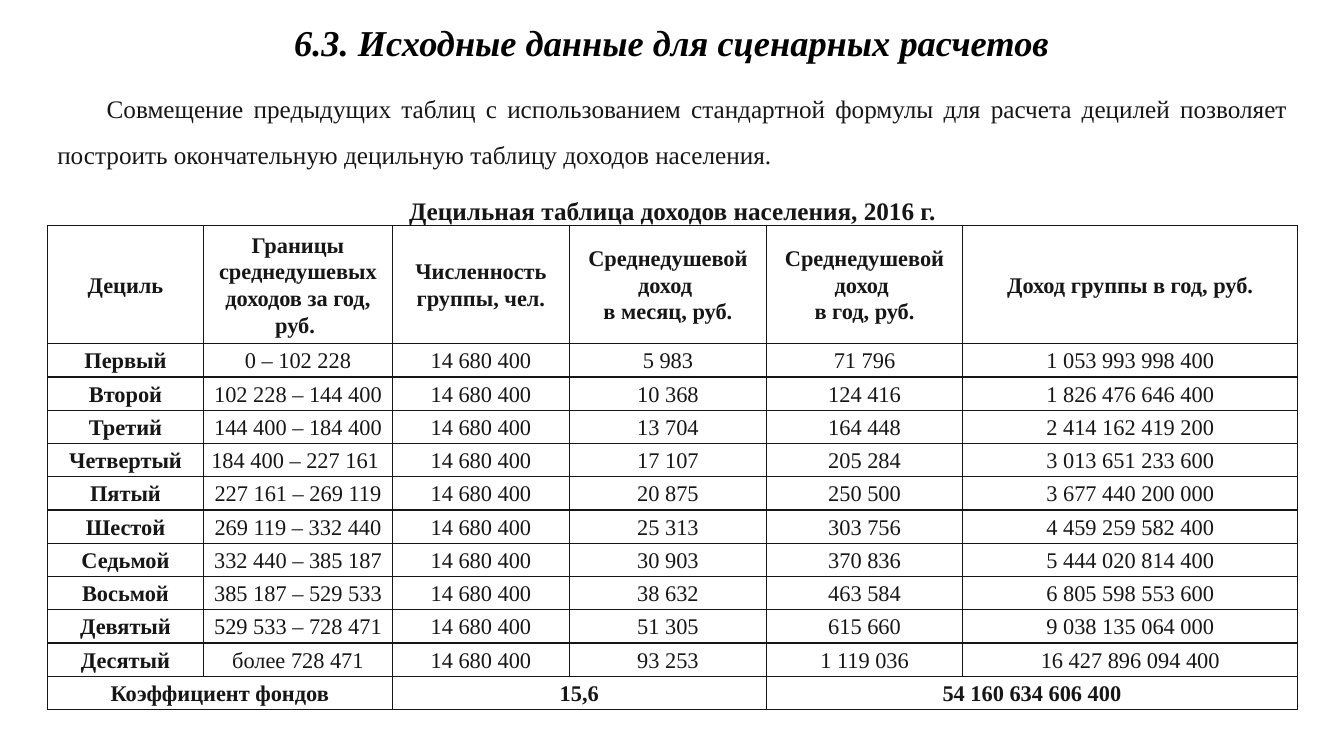
"""Build a slide with the decile table of household incomes."""
from dataclasses import dataclass

from lxml import etree
from pptx import Presentation
from pptx.dml.color import RGBColor
from pptx.enum.text import MSO_ANCHOR, MSO_AUTO_SIZE, PP_ALIGN
from pptx.oxml.ns import qn
from pptx.util import Inches, Pt

BLACK = RGBColor(0x00, 0x00, 0x00)
INK = RGBColor(0x17, 0x16, 0x16)
FONT = "Times New Roman"
TOP, MIDDLE = MSO_ANCHOR.TOP, MSO_ANCHOR.MIDDLE
CENTER, JUSTIFY = PP_ALIGN.CENTER, PP_ALIGN.JUSTIFY
FIXED = MSO_AUTO_SIZE.NONE
SIDES = ("a:lnL", "a:lnR", "a:lnT", "a:lnB")

WIDTHS = (1.55, 1.87, 1.76, 1.95, 1.95, 3.32)
HEAD_H, ROW_H = 1.17, 0.33
COUNT = "14 680 400"
HEADS = (
    "Дециль",
    "Границы среднедушевых доходов за год, руб. ",
    "Численность группы, чел.",
    "Среднедушевой доход \nв месяц, руб.",
    "Среднедушевой доход \nв год, руб.",
    "Доход группы в год, руб.",
)
DECILES = (
    ("Первый", "0 – 102 228", COUNT, "5 983", "71 796", "1 053 993 998 400"),
    ("Второй", "102 228 – 144 400", COUNT, "10 368", "124 416", "1 826 476 646 400"),
    ("Третий", "144 400 – 184 400", COUNT, "13 704", "164 448", "2 414 162 419 200"),
    ("Четвертый", "184 400 – 227 161 ", COUNT, "17 107", "205 284", "3 013 651 233 600"),
    ("Пятый", "227 161 – 269 119", COUNT, "20 875", "250 500", "3 677 440 200 000"),
    ("Шестой", "269 119 – 332 440", COUNT, "25 313", "303 756", "4 459 259 582 400"),
    ("Седьмой", "332 440 – 385 187", COUNT, "30 903", "370 836", "5 444 020 814 400"),
    ("Восьмой", "385 187 – 529 533", COUNT, "38 632", "463 584", "6 805 598 553 600"),
    ("Девятый", "529 533 – 728 471", COUNT, "51 305", "615 660", "9 038 135 064 000"),
    ("Десятый", "более 728 471", COUNT, "93 253", "1 119 036", "16 427 896 094 400"),
)
TOTALS = ("Коэффициент фондов", "", "15,6", "", "54 160 634 606 400", "")
ROWS = (HEADS, *DECILES, TOTALS)


@dataclass(frozen=True)
class Style:
    size: float
    bold: bool = False
    italic: bool = False
    color: RGBColor = INK
    align: PP_ALIGN = CENTER
    space: float = 1.0
    indent: float = 0


@dataclass(frozen=True)
class Block:
    text: str
    box: tuple[float, float, float, float]
    style: Style
    wrap: bool = True


TITLE = Block("6.3. Исходные данные для сценарных расчетов", (0, 0.15, 13.33, 0.54),
              Style(26, bold=True, italic=True, color=BLACK))
INTRO = Block(
    "Совмещение предыдущих таблиц с использованием стандартной формулы для расчета "
    "децилей позволяет построить окончательную децильную таблицу доходов населения.",
    (0.47, 0.73, 12.4, 0.96), Style(18, align=JUSTIFY, space=1.5, indent=0.49))
CAPTION = Block("Децильная таблица доходов населения, 2016 г.", (3.93, 1.74, 5.48, 0.5),
                Style(18, bold=True, space=1.5), wrap=False)


def assign(target, values: dict) -> None:
    """Set each named attribute on the target."""
    for name, value in values.items():
        setattr(target, name, value)


def write(frame, text: str, style: Style) -> None:
    """Fill a text frame and format its paragraphs."""
    frame.text = text
    for para in frame.paragraphs:
        assign(para, {"alignment": style.align, "line_spacing": style.space})
        if style.indent:
            para._p.get_or_add_pPr().set("indent", str(Inches(style.indent)))
        for run in para.runs:
            assign(run.font, {"name": FONT, "size": Pt(style.size),
                              "bold": style.bold, "italic": style.italic})
            run.font.color.rgb = style.color


def place(shape, block: Block) -> None:
    """Position a text shape and write its block."""
    names = ("left", "top", "width", "height")
    assign(shape, dict(zip(names, map(Inches, block.box))))
    assign(shape.text_frame, {"word_wrap": block.wrap, "auto_size": FIXED,
                              "vertical_anchor": TOP})
    write(shape.text_frame, block.text, block.style)


def outline(cell) -> None:
    """Draw a thin line on every side of a cell."""
    props = cell._tc.get_or_add_tcPr()
    for index, side in enumerate(SIDES):
        line = etree.Element(qn(side), w=str(Pt(1)))
        fill = etree.SubElement(line, qn("a:solidFill"))
        etree.SubElement(fill, qn("a:srgbClr"), val=str(INK))
        props.insert(index, line)


def tabulate(slide) -> None:
    """Add the decile table."""
    height = HEAD_H + ROW_H * (len(ROWS) - 1)
    table = slide.shapes.add_table(
        len(ROWS), len(WIDTHS), Inches(0.47), Inches(2.24),
        Inches(sum(WIDTHS)), Inches(height)).table
    assign(table, {"first_row": False, "horz_banding": False})
    for col, width in zip(table.columns, WIDTHS):
        col.width = Inches(width)
    last = len(ROWS) - 1
    for r, values in enumerate(ROWS):
        table.rows[r].height = Inches(ROW_H if r else HEAD_H)
        for c, text in enumerate(values):
            cell = table.cell(r, c)
            assign(cell, {"margin_left": Inches(0.06), "margin_right": Inches(0.06),
                          "margin_top": 0, "margin_bottom": 0,
                          "vertical_anchor": MIDDLE})
            bold = r in (0, last) or c == 0
            write(cell.text_frame, text, Style(16, bold=bold, space=1.07))
            cell.fill.background()
            outline(cell)
    for c in range(0, len(WIDTHS), 2):
        table.cell(last, c).merge(table.cell(last, c + 1))


def main() -> None:
    """Build and save the presentation."""
    deck = Presentation()
    assign(deck, {"slide_width": Inches(13.33), "slide_height": Inches(7.5)})
    slide = deck.slides.add_slide(deck.slide_layouts[5])
    place(slide.shapes.title, TITLE)
    place(slide.shapes.add_textbox(0, 0, 0, 0), INTRO)
    tabulate(slide)
    place(slide.shapes.add_textbox(0, 0, 0, 0), CAPTION)
    deck.save("out.pptx")


if __name__ == "__main__":
    main()
